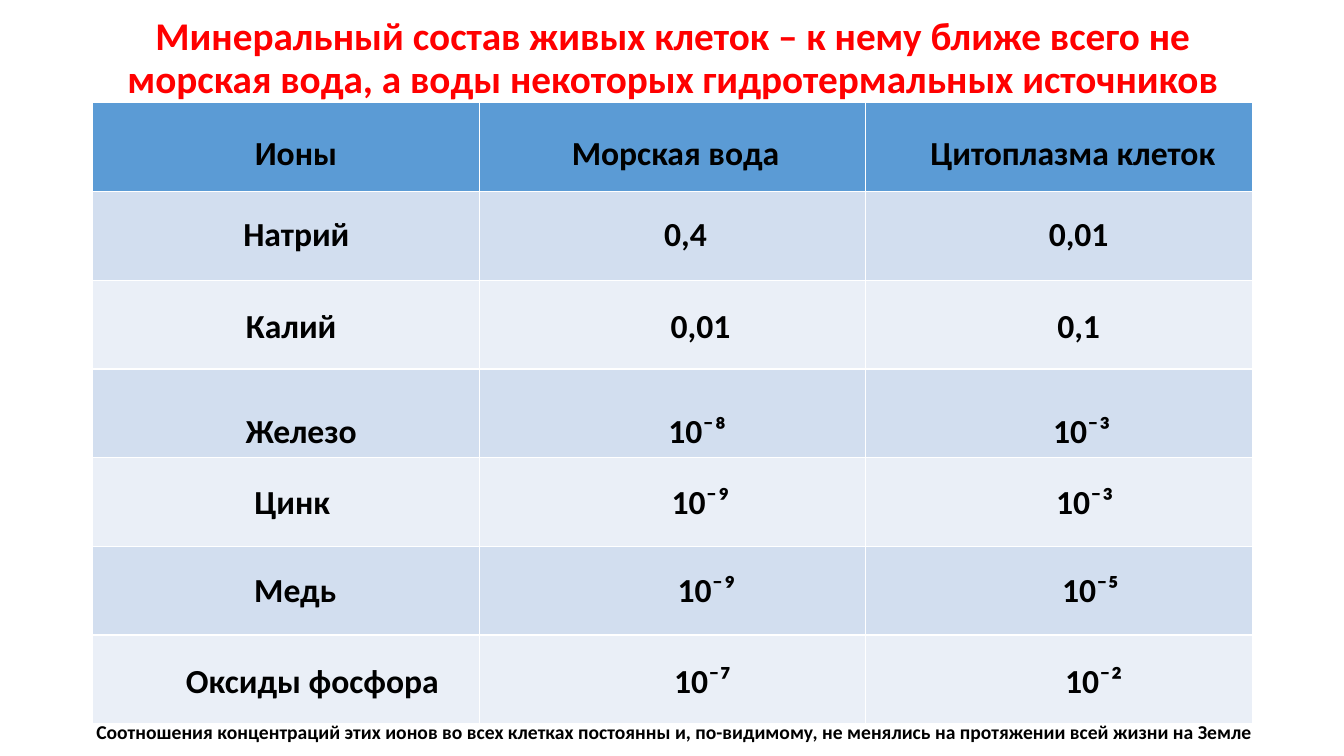
import pptx
import pptx.dml.color
import pptx.enum.text
import pptx.oxml
import pptx.oxml.ns
import pptx.util
import lxml.etree

PX = 9144
FONT = "Calibri"
INSET = 10
LINE_HEIGHT = 50
COLORS = {
    "title": "FF0000",
    "text": "000000",
    "header": "5B9BD5",
    "odd": "D2DEEF",
    "even": "EAEFF7",
}
TITLE = (
    "Минеральный состав живых клеток – к нему ближе всего не "
    "морская вода, а воды некоторых гидротермальных источников"
)
FOOTNOTE = (
    "Соотношения концентраций этих ионов во всех клетках постоянны и, "
    "по-видимому, не менялись на протяжении всей жизни на Земле"
)
HEADINGS = [
    ("Ионы", 183, 126, 221),
    ("Морская вода", 496, 126, 348),
    ("Цитоплазма клеток", 903, 126, 322),
    ("Натрий", 212, 206, 164),
]
ION_LINES = [
    (551, 206, 655, [("0,4", 680), ("0,01", 1070)]),
    (92, 298, 1150, [("Калий", 289), ("0,01", 695), ("0,1", 1070)]),
    (92, 402, 1125, [("Железо", 299), ("10⁻⁸", 692), ("10⁻³", 1073)]),
    (92, 472, 1150, [("Цинк", 290), ("10⁻⁹", 695), ("10⁻³", 1076)]),
    (92, 559, 1150, [("Медь", 293), ("10⁻⁹", 701), ("10⁻⁵", 1082)]),
    (92, 650, 1150, [("Оксиды фосфора", 310), ("10⁻⁷", 697), ("10⁻²", 1085)]),
]


def px(length):
    """Turn a length in px into EMU."""
    return pptx.util.Emu(length * PX)


def rgb(name):
    """Return the named colour."""
    return pptx.dml.color.RGBColor.from_string(COLORS[name])


def add_line(slide, box, text, size=24, color="text", centred=True):
    """Place one bold paragraph in a text box and return the paragraph."""
    frame = slide.shapes.add_textbox(*map(px, box)).text_frame
    frame.word_wrap = True
    paragraph = frame.paragraphs[0]
    paragraph.text = text
    if centred:
        paragraph.alignment = pptx.enum.text.PP_ALIGN.CENTER
    font = paragraph.runs[0].font
    font.name = FONT
    font.size = pptx.util.Pt(size)
    font.bold = True
    font.color.rgb = rgb(color)
    return paragraph


def add_title(slide, box):
    """Place the slide title, centred in its box."""
    paragraph = add_line(slide, box, TITLE, 28, "title")
    paragraph.line_spacing = 0.9
    slide.shapes[-1].text_frame.vertical_anchor = pptx.enum.text.MSO_ANCHOR.MIDDLE


def add_grid(slide, box, row_count, column_count):
    """Fill the box with the banded grid behind the concentrations."""
    width, height = box[2:]
    table = slide.shapes.add_table(row_count, column_count, *map(px, box)).table
    for column in table.columns:
        column.width = px(width) // column_count
    for r, row in enumerate(table.rows):
        row.height = px(height) // row_count
        band = "header" if r == 0 else "odd" if r % 2 else "even"
        for cell in row.cells:
            cell.fill.solid()
            cell.fill.fore_color.rgb = rgb(band)


def add_ion_line(slide, box, entries):
    """Spread the entries of one ion over centred tab stops."""
    text = "".join("\t" + entry for entry, centre in entries)
    paragraph = add_line(slide, box, text, centred=False)
    properties = paragraph._p.get_or_add_pPr()
    stops = lxml.etree.SubElement(properties, pptx.oxml.ns.qn("a:tabLst"))
    for entry, centre in entries:
        stop = lxml.etree.SubElement(stops, pptx.oxml.ns.qn("a:tab"))
        stop.set("pos", str(px(centre - box[0] - INSET)))
        stop.set("algn", "ctr")


def main():
    """Build the slide and save it."""
    deck = pptx.Presentation()
    deck.slide_width, deck.slide_height = px(1333), px(750)
    slide = deck.slides.add_slide(deck.slide_layouts[6])
    add_title(slide, (92, 7, 1150, 104))
    add_grid(slide, (92, 102, 1150, 616), 7, 3)
    for text, left, top, width in HEADINGS:
        add_line(slide, (left, top, width, LINE_HEIGHT), text)
    for left, top, width, entries in ION_LINES:
        add_ion_line(slide, (left, top, width, LINE_HEIGHT), entries)
    add_line(slide, (13, 709, 1312, 34), FOOTNOTE, 14)
    deck.save("out.pptx")


if __name__ == "__main__":
    main()
